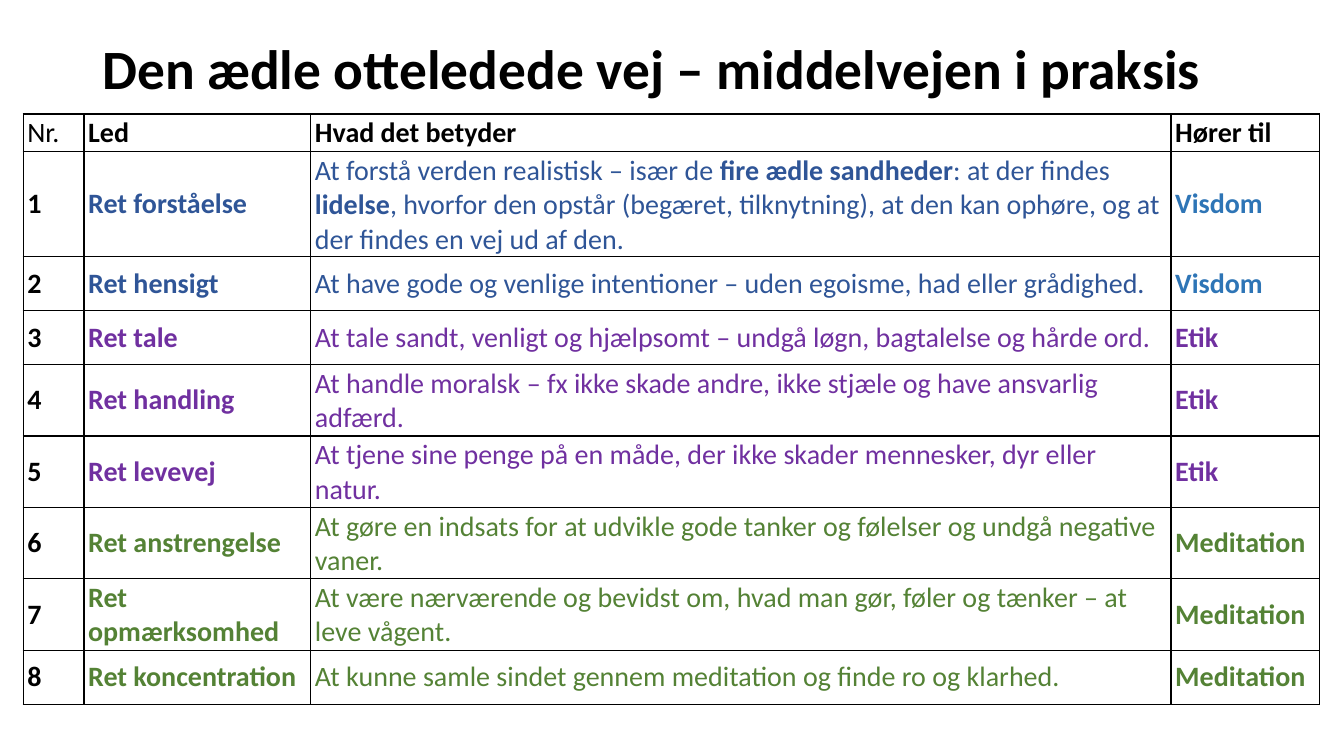
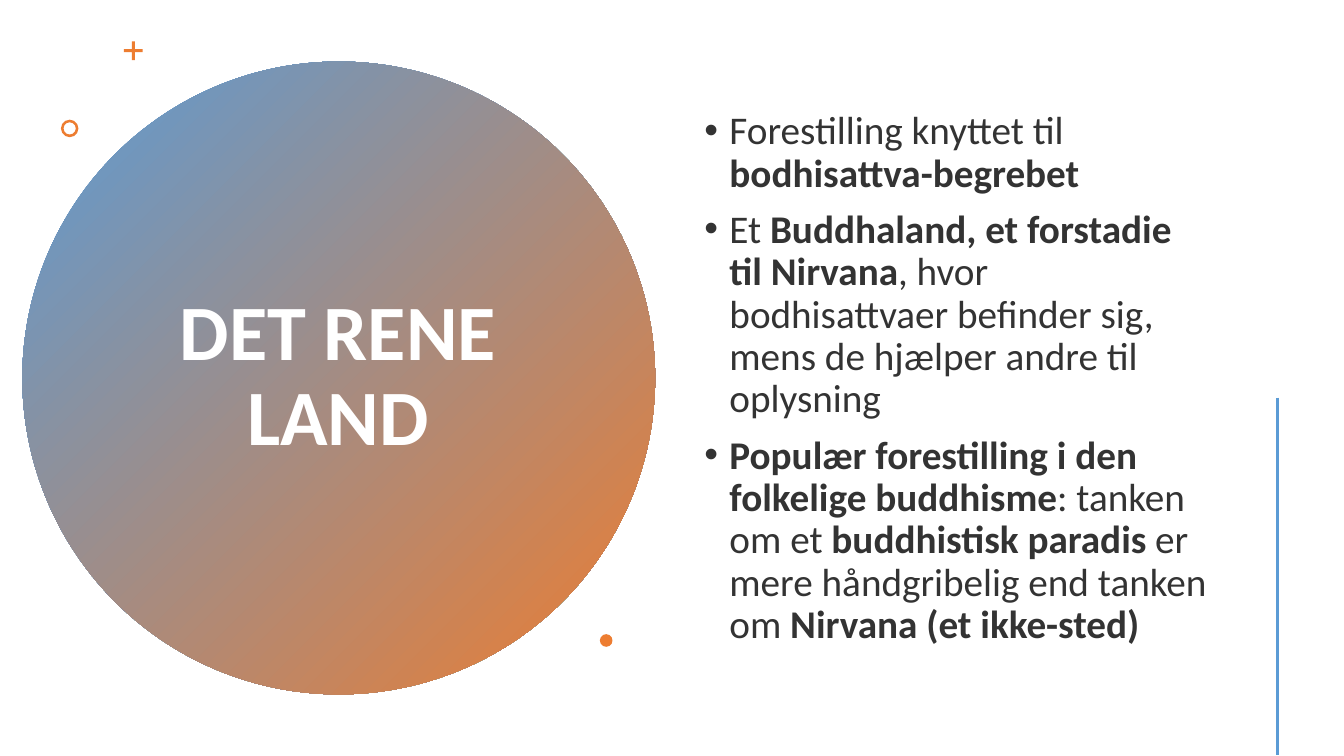
import pptx
import pptx.util
import pptx.dml.color
import pptx.enum.text
import pptx.enum.shapes
import pptx.oxml
import pptx.oxml.ns
from lxml import etree
from dataclasses import dataclass

Pt = pptx.util.Pt
Shape = pptx.enum.shapes.MSO_SHAPE
Align = pptx.enum.text.PP_ALIGN
Middle = pptx.enum.text.MSO_ANCHOR.MIDDLE
qn = pptx.oxml.ns.qn


@dataclass(frozen=True)
class Theme:
    font: str = "Calibri"
    black: str = "000000"
    white: str = "FFFFFF"
    ink: str = "333333"
    navy: str = "2F5597"
    blue: str = "2E75B6"
    purple: str = "7030A0"
    green: str = "548235"
    sky: str = "5B9BD5"
    orange: str = "ED7D31"
    title: float = 39.6
    hero: float = 56
    body: float = 28
    cell: float = 20


theme = Theme()

# Content: **...** marks bold text
path_title = "Den ædle otteledede vej – middelvejen i praksis"
heads = ["Nr.", "**Led**", "**Hvad det betyder**", "**Hører til**"]
groups = {
    "Visdom": (theme.navy, theme.blue),
    "Etik": (theme.purple, theme.purple),
    "Meditation": (theme.green, theme.green),
}
steps = [
    ("Ret forståelse", "At forstå verden realistisk – især de **fire ædle sandheder**: "
     "at der findes **lidelse**, hvorfor den opstår (begæret, tilknytning), "
     "at den kan ophøre, og at der findes en vej ud af den.", "Visdom"),
    ("Ret hensigt", "At have gode og venlige intentioner – uden egoisme, had eller "
     "grådighed.", "Visdom"),
    ("Ret tale", "At tale sandt, venligt og hjælpsomt – undgå løgn, bagtalelse og "
     "hårde ord.", "Etik"),
    ("Ret handling", "At handle moralsk – fx ikke skade andre, ikke stjæle og have "
     "ansvarlig adfærd.", "Etik"),
    ("Ret levevej", "At tjene sine penge på en måde, der ikke skader mennesker, dyr "
     "eller natur.", "Etik"),
    ("Ret anstrengelse", "At gøre en indsats for at udvikle gode tanker og følelser "
     "og undgå negative vaner.", "Meditation"),
    ("Ret opmærksomhed", "At være nærværende og bevidst om, hvad man gør, føler og "
     "tænker – at leve vågent.", "Meditation"),
    ("Ret koncentration", "At kunne samle sindet gennem meditation og finde ro og "
     "klarhed.", "Meditation"),
]
widths = [43.5, 162, 614.5, 106]
heights = [19, 47, 38.5, 38.5, 50.5, 50.5, 50.5, 50.5, 38.5]

land_title = "DET RENE LAND"
points = [
    "Forestilling knyttet til **bodhisattva-begrebet**",
    "Et **Buddhaland, et forstadie til Nirvana**, hvor bodhisattvaer befinder sig, "
    "mens de hjælper andre til oplysning",
    "**Populær forestilling i den folkelige buddhisme**: tanken om et "
    "**buddhistisk paradis** er mere håndgribelig end tanken om "
    "**Nirvana (et ikke-sted)**",
]
# Shape, box, adjustment
marks = [
    (Shape.CROSS, (88.5, 29.5, 13.5, 13.5), 0.42),
    (Shape.DONUT, (43.5, 85.5, 12.5, 12.5), 0.15),
    (Shape.OVAL, (428.5, 453, 9, 9), None),
]


def rgb(code):
    return pptx.dml.color.RGBColor.from_string(code)


def write(frame, lines, size, color, align=Align.LEFT, space=None, gap=0, bullet=False):
    """Fill a text frame with lines, switching bold at each ** mark."""
    frame.word_wrap = True
    frame.vertical_anchor = Middle
    for i, line in enumerate(lines):
        para = frame.add_paragraph() if i else frame.paragraphs[0]
        if bullet:
            props = para._p.get_or_add_pPr()
            props.set("marL", str(Pt(18)))
            props.set("indent", str(-Pt(18)))
            etree.SubElement(props, qn("a:buFont")).set("typeface", "Arial")
            etree.SubElement(props, qn("a:buChar")).set("char", "•")
        para.alignment = align
        if space:
            para.line_spacing = space
        if gap and i:
            para.space_before = Pt(gap)
        for j, part in enumerate(line.split("**")):
            if part:
                run = para.add_run()
                run.text = part
                run.font.name = theme.font
                run.font.size = Pt(size)
                run.font.bold = j % 2 == 1
                run.font.color.rgb = rgb(color)


def add_text(slide, box, lines, **form):
    area = slide.shapes.add_textbox(*map(Pt, box))
    write(area.text_frame, lines, space=0.9, **form)


def add_mark(slide, kind, box, adjust=None):
    mark = slide.shapes.add_shape(kind, *map(Pt, box))
    mark.shadow.inherit = False
    mark.line.fill.background()
    mark.fill.solid()
    mark.fill.fore_color.rgb = rgb(theme.orange)
    if adjust:
        mark.adjustments[0] = adjust
    return mark


def frame_cell(cell):
    """Clear the fill and draw a thin line on all four sides."""
    cell.fill.background()
    props = cell._tc.get_or_add_tcPr()
    for i, side in enumerate(("lnL", "lnR", "lnT", "lnB")):
        edge = etree.Element(qn("a:" + side), w=str(Pt(1)))
        fill = etree.SubElement(edge, qn("a:solidFill"))
        etree.SubElement(fill, qn("a:srgbClr")).set("val", theme.black)
        props.insert(i, edge)


def path_slide(slide):
    add_text(slide, (66, 26, 828, 50), [f"**{path_title}**"],
             size=theme.title, color=theme.black)

    # Table rows, each cell with its colour
    rows = [[(head, theme.black) for head in heads]]
    for i, (name, sense, group) in enumerate(steps, 1):
        main, tag = groups[group]
        rows.append([(f"**{i}**", theme.black), (f"**{name}**", main),
                     (sense, main), (f"**{group}**", tag)])

    box = (16.5, 81.5, sum(widths), sum(heights))
    table = slide.shapes.add_table(len(rows), len(widths), *map(Pt, box)).table
    table.first_row = table.horz_banding = False
    for col, width in zip(table.columns, widths):
        col.width = Pt(width)
    for row, height, cells in zip(table.rows, heights, rows):
        row.height = Pt(height)
        for cell, (text, color) in zip(row.cells, cells):
            cell.margin_left = cell.margin_right = Pt(3)
            cell.margin_top = cell.margin_bottom = Pt(1.5)
            write(cell.text_frame, [text], size=theme.cell, color=color)
            cell.vertical_anchor = Middle
            frame_cell(cell)


def land_slide(slide):
    # Disc with title
    disc = add_mark(slide, Shape.OVAL, (16, 44, 452, 452))
    disc.fill.gradient()
    disc.fill.gradient_angle = 315
    for stop, place, color in zip(disc.fill.gradient_stops, (0, 1),
                                  (theme.sky, theme.orange)):
        stop.position = place
        stop.color.rgb = rgb(color)
    add_text(slide, (98, 101.5, 287, 336), [f"**{land_title}**"],
             size=theme.hero, color=theme.white, align=Align.CENTER)

    # Small ornaments
    for mark in marks:
        add_mark(slide, *mark)

    # Points
    add_text(slide, (496, 41, 376, 459.5), points, size=theme.body,
             color=theme.ink, gap=10, bullet=True)

    # Side line
    line = slide.shapes.add_connector(pptx.enum.shapes.MSO_CONNECTOR.STRAIGHT,
                                      Pt(912.5), Pt(284), Pt(912.5), Pt(539.5))
    line.line.width = Pt(2)
    line.line.color.rgb = rgb(theme.sky)
    etree.SubElement(line._element.spPr, qn("a:effectLst"))


def main():
    deck = pptx.Presentation()
    deck.slide_width, deck.slide_height = Pt(960), Pt(540)
    for build in (path_slide, land_slide):
        build(deck.slides.add_slide(deck.slide_layouts[6]))
    deck.save("out.pptx")


if __name__ == "__main__":
    main()
